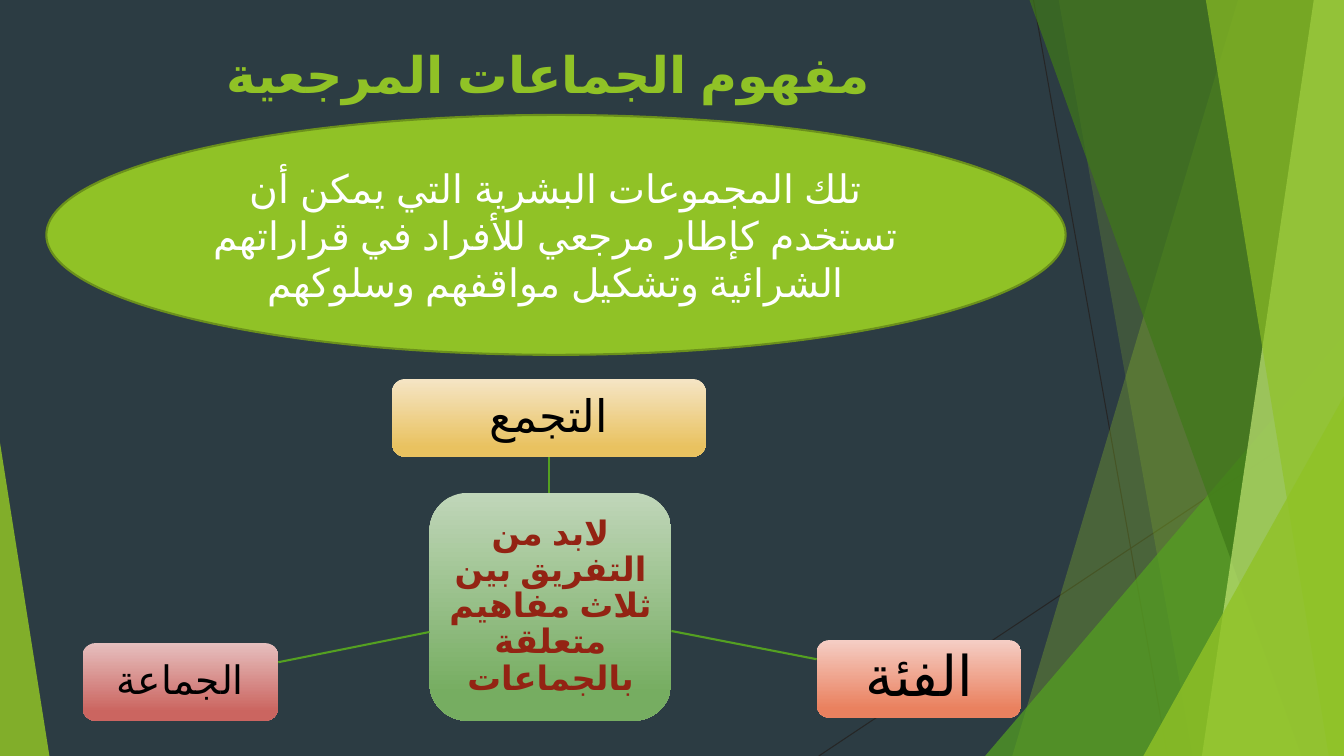
from lxml.etree import SubElement
from pptx import Presentation
from pptx.dml.color import RGBColor
from pptx.enum.lang import MSO_LANGUAGE_ID
from pptx.enum.shapes import MSO_CONNECTOR, MSO_SHAPE
from pptx.enum.text import MSO_ANCHOR, PP_ALIGN
from pptx.oxml.ns import qn
from pptx.util import Inches, Pt

W, H = Inches(13.33), Inches(7.5)
FONT = "Arial"
COLORS = {
    "back": "2C3C43", "lime": "90C226", "green": "54A021", "forest": "3F7819",
    "pale": "C0E474", "olive": "6B901C", "thin": "262626",
    "white": "FFFFFF", "black": "000000", "red": "932313",
    "hub_top": "C0D6B9", "hub_end": "76AD61",
    "gold_top": "F5E5C5", "gold_end": "E9C260",
    "coral_top": "F5CEC5", "coral_end": "EA815F",
    "rose_top": "E6BFBE", "rose_end": "CB6560",
}


def rgb(name):
    return RGBColor.from_string(COLORS[name])


def point(box, x, y):
    left, top, width, height = box
    return round(left + width * x / 100), round(top + height * y / 100)


def area(box, x, y, w, h):
    return *point(box, x, y), round(box[2] * w / 100), round(box[3] * h / 100)


def add_line(s, box, start, end, color, width):
    c = s.shapes.add_connector(
        MSO_CONNECTOR.STRAIGHT, *point(box, *start), *point(box, *end))
    c.line.color.rgb = rgb(color)
    c.line.width = Pt(width)
    SubElement(c._element.spPr, qn("a:effectLst"))


def paint(sp, color, alpha):
    sp.shadow.inherit = False
    sp.fill.solid()
    sp.fill.fore_color.rgb = rgb(color)
    sp.line.fill.background()
    clr = sp._element.spPr.find(qn("a:solidFill"))[0]
    SubElement(clr, qn("a:alpha"), val=str(alpha * 1000))


def add_facet(s, box, points, color, alpha):
    start, *rest = [point(box, *xy) for xy in points]
    fb = s.shapes.build_freeform(*start, scale=1.0)
    fb.add_line_segments(rest, close=True)
    paint(fb.convert_to_shape(), color, alpha)


def add_triangle(s, box, apex, color, alpha):
    sp = s.shapes.add_shape(MSO_SHAPE.ISOSCELES_TRIANGLE, *box)
    sp.adjustments[0] = apex
    paint(sp, color, alpha)


def add_text(sp, text, size, color, bold=False, rtl=True, spacing=None,
             inset=None, anchor=MSO_ANCHOR.MIDDLE):
    tf = sp.text_frame
    tf.word_wrap = True
    tf.vertical_anchor = anchor
    if inset is not None:
        tf.margin_left = tf.margin_right = Inches(inset)
        tf.margin_top = tf.margin_bottom = Inches(inset)
    p = tf.paragraphs[0]
    p.alignment = PP_ALIGN.CENTER
    if rtl:
        p._p.get_or_add_pPr().set("rtl", "1")
    if spacing:
        p.line_spacing = spacing
    r = p.add_run()
    r.text = text
    r.font.name = FONT
    r.font.size = Pt(size)
    r.font.bold = bold
    r.font.color.rgb = rgb(color)
    r.font.language_id = MSO_LANGUAGE_ID.ARABIC
    SubElement(r._r.get_or_add_rPr(), qn("a:cs"), typeface=FONT)


def right_facets(s, box):
    add_line(s, box, (40.88, 0), (66.41, 100), "thin", 0.75)
    add_line(s, box, (100, 53.73), (0, 100), "thin", 0.75)

    def band(top, bottom, color, alpha):
        points = [(top, 0), (100, 0), (100, 100), (bottom, 100)]
        add_facet(s, box, points, color, alpha)

    def corner(x, y, color, alpha):
        add_triangle(s, area(box, x, y, 100 - x, 100 - y), 1, color, alpha)

    band(79.85, 36.85, "lime", 30)
    band(45.68, 71.21, "lime", 20)
    corner(31.67, 44.4, "green", 72)
    band(40.12, 91.94, "forest", 70)
    band(94.24, 72.94, "pale", 70)
    band(73.7, 97.12, "lime", 65)
    corner(61.8, 52.4, "lime", 80)


def heading(s, box):
    tb = s.shapes.add_textbox(*box)
    add_text(tb, "مفهوم الجماعات المرجعية", 36, "lime", bold=True,
             anchor=MSO_ANCHOR.TOP)


def definition(s, box):
    sp = s.shapes.add_shape(MSO_SHAPE.OVAL, *box)
    sp.shadow.inherit = False
    sp.fill.solid()
    sp.fill.fore_color.rgb = rgb("lime")
    sp.line.color.rgb = rgb("olive")
    sp.line.width = Pt(1.5)
    add_text(sp, "تلك المجموعات البشرية التي يمكن أن تستخدم كإطار مرجعي "
             "للأفراد في قراراتهم الشرائية وتشكيل مواقفهم وسلوكهم",
             28, "white", rtl=False)


def card(s, box, tone, text, size, inset, color="black", bold=False):
    sp = s.shapes.add_shape(MSO_SHAPE.ROUNDED_RECTANGLE, *box)
    sp.shadow.inherit = False
    sp.line.fill.background()
    sp.fill.gradient()
    sp.fill.gradient_angle = 270
    ends = ((0, "_top"), (0.88, "_end"))
    for stop, (position, end) in zip(sp.fill.gradient_stops, ends):
        stop.position = position
        stop.color.rgb = rgb(tone + end)
    add_text(sp, text, size, color, bold, spacing=0.9, inset=inset)


def concepts(s, box):
    card(s, area(box, 36.95, 33.33, 25.78, 66.67), "hub",
         "لابد من التفريق بين ثلاث مفاهيم متعلقة بالجماعات",
         24, 0.07, "red", True)
    row = 22.71
    spokes = [
        (32.98, 0, 33.4, "gold", "التجمع", 32, 0.09,
         (49.73, 33.33), (49.73, row)),
        (78.2, 76.4, 21.8, "coral", "الفئة", 40, 0.11,
         (62.73, 73.75), (78.2, 82.01)),
        (0, 100 - row, 20.84, "rose", "الجماعة", 28, 0.08,
         (36.95, 74.04), (20.84, 82.89)),
    ]
    for x, y, w, tone, text, size, inset, start, end in spokes:
        add_line(s, box, start, end, "green", 1.5)
        card(s, area(box, x, y, w, row), tone, text, size, inset)


def main():
    prs = Presentation()
    prs.slide_width, prs.slide_height = W, H
    s = prs.slides.add_slide(prs.slide_layouts[6])
    s.background.fill.solid()
    s.background.fill.fore_color.rgb = rgb("back")
    page = (0, 0, W, H)
    right_facets(s, area(page, 60.92, 0, 39.08, 100))
    add_triangle(s, area(page, 0, 58.53, 3.68, 41.47), 0, "lime", 85)
    heading(s, area(page, 5.55, 5.07, 70.52, 19.2))
    definition(s, area(page, 3.45, 15.2, 75.84, 31.73))
    concepts(s, area(page, 6.15, 50.13, 69.84, 45.2))
    prs.save("out.pptx")


if __name__ == "__main__":
    main()
